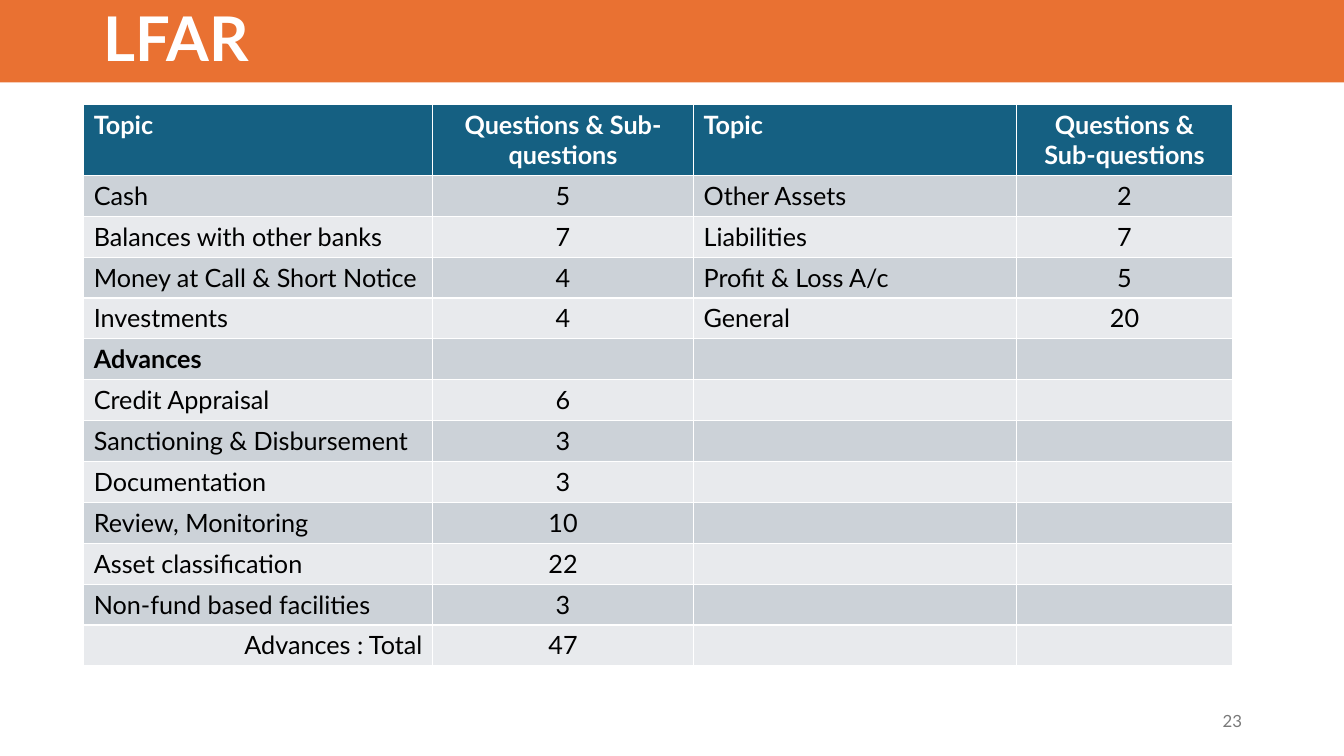
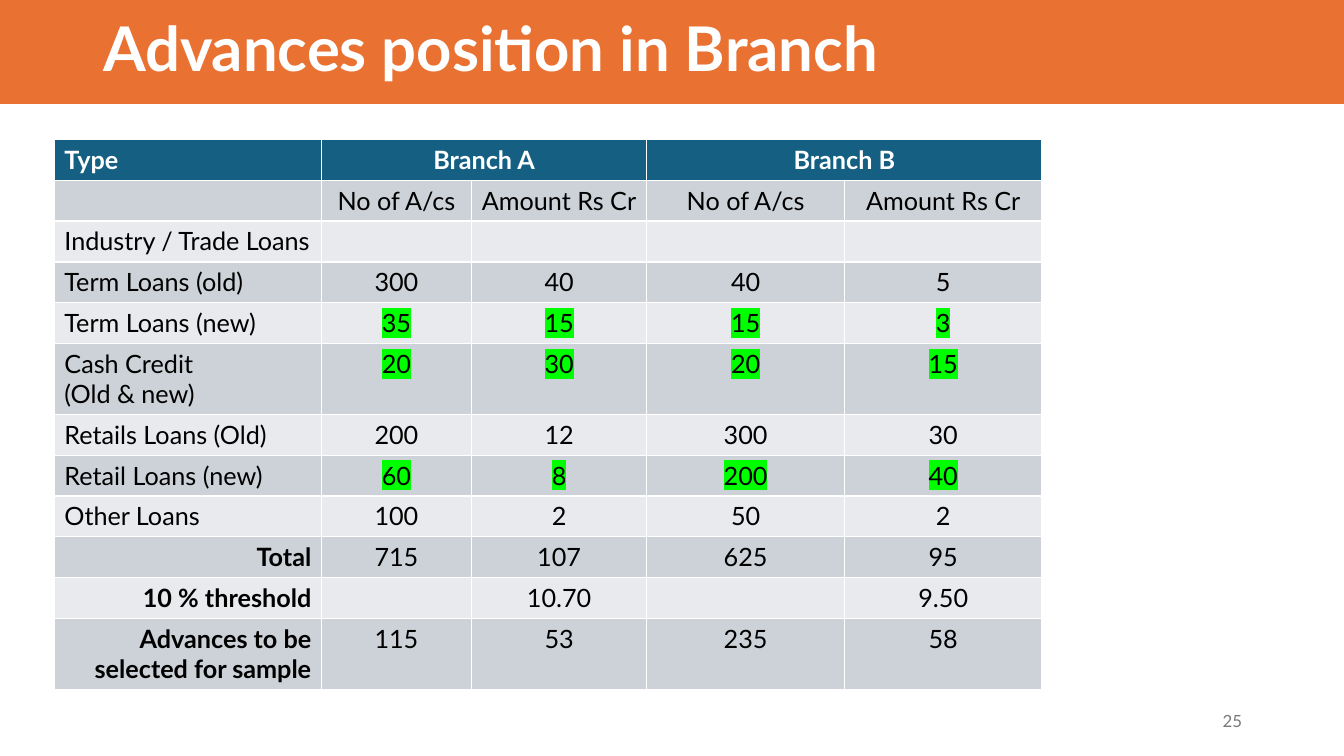
from dataclasses import dataclass

from lxml import etree
from pptx import Presentation
from pptx.dml.color import RGBColor
from pptx.enum.shapes import MSO_SHAPE
from pptx.enum.text import MSO_ANCHOR, PP_ALIGN
from pptx.oxml.ns import qn
from pptx.slide import Slide
from pptx.table import _Cell as Cell
from pptx.text.text import TextFrame
from pptx.util import Cm, Pt

LEFT, CENTER, RIGHT = PP_ALIGN.LEFT, PP_ALIGN.CENTER, PP_ALIGN.RIGHT
MIDDLE = MSO_ANCHOR.MIDDLE
RECT = MSO_SHAPE.RECTANGLE

FONT = "Lato"
ORANGE = RGBColor(0xE9, 0x71, 0x32)
BLUE = RGBColor(0x15, 0x60, 0x82)
DARK = RGBColor(0xCC, 0xD2, 0xD8)
LIGHT = RGBColor(0xE8, 0xEA, 0xED)
GREY = RGBColor(0x79, 0x79, 0x79)
GREEN = RGBColor(0x00, 0xFF, 0x00)
WHITE = RGBColor(0xFF, 0xFF, 0xFF)
BLACK = RGBColor(0x00, 0x00, 0x00)

WIDTH, HEIGHT = Cm(33.87), Cm(19.05)
ROW_HEIGHT = Cm(1.03)
LAYOUT_BLANK = 6


@dataclass(frozen=True)
class Row:
    """One table row; bold and right apply to its first cell only."""
    cells: tuple[str, ...]
    bold: bool = False
    right: bool = False
    marked: bool = False


@dataclass(frozen=True)
class Page:
    title: str
    number: int
    band: float
    left: float
    top: float
    widths: tuple[float, ...]
    aligns: tuple[PP_ALIGN, ...]
    rows: tuple[Row, ...]
    spans: tuple[tuple[int, int], ...] = ()


TOPICS = Page(
    title="LFAR", number=23, band=2.08, left=2.11, top=2.64,
    widths=(8.79, 6.58, 8.13, 5.46),
    aligns=(LEFT, CENTER, LEFT, CENTER),
    rows=(
        Row(("Topic", "Questions & Sub-questions") * 2),
        Row(("Cash", "5", "Other Assets", "2")),
        Row(("Balances with other banks", "7", "Liabilities", "7")),
        Row(("Money at Call & Short Notice", "4", "Profit & Loss A/c", "5")),
        Row(("Investments", "4", "General", "20")),
        Row(("Advances",), bold=True),
        Row(("Credit Appraisal", "6")),
        Row(("Sanctioning & Disbursement", "3")),
        Row(("Documentation", "3")),
        Row(("Review, Monitoring", "10")),
        Row(("Asset classification", "22")),
        Row(("Non-fund based facilities", "3")),
        Row(("Advances : Total", "47"), right=True),
    ),
)

LOANS = Page(
    title="Advances position in Branch", number=25, band=2.62,
    left=1.37, top=3.51,
    widths=(6.73, 3.78, 4.42, 4.98, 4.98),
    aligns=(LEFT,) + (CENTER,) * 4,
    spans=((1, 2), (3, 4)),
    rows=(
        Row(("Type", "Branch A", "", "Branch B")),
        Row(("",) + ("No of A/cs", "Amount Rs Cr") * 2),
        Row(("Industry / Trade Loans",)),
        Row(("Term Loans (old)", "300", "40", "40", "5")),
        Row(("Term Loans (new)", "35", "15", "15", "3"), marked=True),
        Row(("Cash Credit\v(Old & new)", "20", "30", "20", "15"), marked=True),
        Row(("Retails Loans (Old)", "200", "12", "300", "30")),
        Row(("Retail Loans (new)", "60", "8", "200", "40"), marked=True),
        Row(("Other Loans", "100", "2", "50", "2")),
        Row(("Total", "715", "107", "625", "95"), bold=True, right=True),
        Row(("10 % threshold", "", "10.70", "", "9.50"),
            bold=True, right=True),
        Row(("Advances to be selected for sample", "115", "53", "235", "58"),
            bold=True, right=True),
    ),
)


def write(frame: TextFrame, text: str, size: float, color: RGBColor,
          align: PP_ALIGN = LEFT, bold: bool = False) -> None:
    frame.text = text
    frame.word_wrap = True
    line = frame.paragraphs[0]
    line.alignment = align
    for run in line.runs:
        run.font.name = FONT
        run.font.size = Pt(size)
        run.font.bold = bold
        run.font.color.rgb = color


def mark(cell: Cell) -> None:
    """Highlight the cell's text in green."""
    for run in cell.text_frame.paragraphs[0].runs:
        light = etree.Element(qn("a:highlight"))
        etree.SubElement(light, qn("a:srgbClr"), val=str(GREEN))
        run.font.fill  # the highlight has to follow the text fill
        run._r.rPr.find(qn("a:solidFill")).addnext(light)


def add_band(slide: Slide, page: Page) -> None:
    band = slide.shapes.add_shape(RECT, 0, 0, WIDTH, Cm(page.band))
    band.shadow.inherit = False
    band.fill.solid()
    band.fill.fore_color.rgb = ORANGE
    band.line.fill.background()
    frame = band.text_frame
    frame.margin_left = Cm(2.6)
    frame.vertical_anchor = MIDDLE
    write(frame, page.title, 44, WHITE, bold=True)
    frame.paragraphs[0].line_spacing = 0.9


def add_number(slide: Slide, number: int) -> None:
    box = slide.shapes.add_textbox(Cm(23.93), Cm(17.65), Cm(7.62), Cm(1.02))
    box.text_frame.vertical_anchor = MIDDLE
    write(box.text_frame, str(number), 12, GREY, RIGHT)


def add_grid(slide: Slide, page: Page) -> None:
    count = len(page.rows)
    table = slide.shapes.add_table(
        count, len(page.widths), Cm(page.left), Cm(page.top),
        Cm(sum(page.widths)), ROW_HEIGHT * count).table
    for column, width in zip(table.columns, page.widths):
        column.width = Cm(width)
    for i, row in enumerate(page.rows):
        table.rows[i].height = ROW_HEIGHT
        head = i == 0
        fill = BLUE if head else DARK if i % 2 else LIGHT
        for j, align in enumerate(page.aligns):
            cell = table.cell(i, j)
            cell.fill.solid()
            cell.fill.fore_color.rgb = fill
            text = row.cells[j] if j < len(row.cells) else ""
            first = j == 0
            write(cell.text_frame, text, 18, WHITE if head else BLACK,
                  RIGHT if first and row.right else align,
                  head or (first and row.bold))
            if row.marked and not first:
                mark(cell)
    for start, end in page.spans:
        table.cell(0, start).merge(table.cell(0, end))


def main() -> None:
    deck = Presentation()
    deck.slide_width, deck.slide_height = WIDTH, HEIGHT
    for page in (TOPICS, LOANS):
        slide = deck.slides.add_slide(deck.slide_layouts[LAYOUT_BLANK])
        add_band(slide, page)
        add_grid(slide, page)
        add_number(slide, page.number)
    deck.save("out.pptx")


if __name__ == "__main__":
    main()
